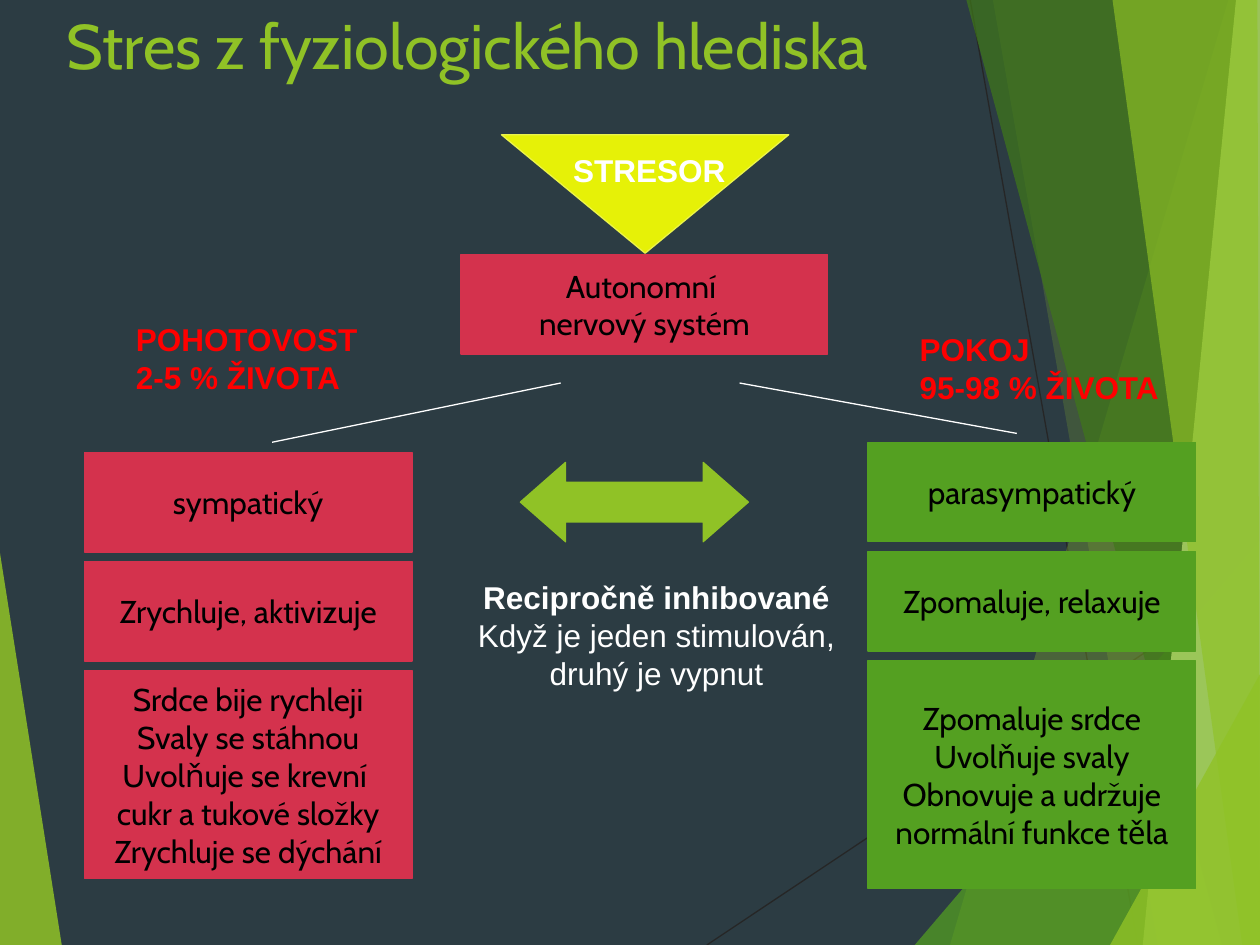
from lxml import etree
from pptx import Presentation
from pptx import util as u
from pptx.dml.color import RGBColor
from pptx.enum import shapes, text
from pptx.oxml.ns import qn

SLATE = RGBColor(0x2C, 0x3C, 0x43)
CHARCOAL = RGBColor(0x26, 0x26, 0x26)
LIME = RGBColor(0x90, 0xC2, 0x26)
PALE_LIME = RGBColor(0xC0, 0xE4, 0x74)
GREEN = RGBColor(0x54, 0xA0, 0x21)
FOREST = RGBColor(0x3F, 0x78, 0x19)
CRIMSON = RGBColor(0xD4, 0x32, 0x4D)
YELLOW = RGBColor(0xE6, 0xF1, 0x07)
PALE_YELLOW = RGBColor(0xEB, 0xF3, 0x4B)
RED = RGBColor(0xFF, 0x00, 0x00)
WHITE = RGBColor(0xFF, 0xFF, 0xFF)
BLACK = RGBColor(0x00, 0x00, 0x00)

LEFT, CENTER = text.PP_ALIGN.LEFT, text.PP_ALIGN.CENTER
TOP, MIDDLE = text.MSO_ANCHOR.TOP, text.MSO_ANCHOR.MIDDLE


def write(box, lines, color=WHITE, font="Arial", size=18, bold_lines=0,
          align=LEFT, anchor=TOP, wrap=False):
    """Fill a box with one paragraph per line, the first bold_lines in bold."""
    frame = box.text_frame
    frame.word_wrap, frame.vertical_anchor = wrap, anchor
    for index, line in enumerate(lines.split("\n")):
        para = frame.paragraphs[0] if index == 0 else frame.add_paragraph()
        para.alignment = align
        span = para.add_run()
        span.text = line
        span.font.name, span.font.size = font, u.Pt(size)
        span.font.bold = index < bold_lines
        span.font.color.rgb = color


class Board:
    """Draws on one page with a grid of 100 columns by 75 rows."""

    columns, rows = 100, 75
    line_width = u.Pt(0.75)

    def __init__(self, deck, background):
        self.cell_width = deck.slide_width / self.columns
        self.cell_height = deck.slide_height / self.rows
        self.page = deck.slides.add_slide(deck.slide_layouts[6])
        self.page.background.fill.solid()
        self.page.background.fill.fore_color.rgb = background

    def point(self, column, row):
        return round(column * self.cell_width), round(row * self.cell_height)

    def area(self, column, row, width, height):
        return *self.point(column, row), *self.point(width, height)

    def paint(self, shape, fill, outline=None):
        shape.shadow.inherit = False
        shape.fill.solid()
        shape.fill.fore_color.rgb = fill
        if outline is None:
            shape.line.fill.background()
        else:
            shape.line.color.rgb, shape.line.width = outline, self.line_width

    def facet(self, points, color, opacity):
        start, *others = [self.point(*corner) for corner in points]
        builder = self.page.shapes.build_freeform(*start)
        builder.add_line_segments(others)
        shape = builder.convert_to_shape()
        self.paint(shape, color)
        tint = shape.fill._xPr.find(f"{qn('a:solidFill')}/{qn('a:srgbClr')}")
        etree.SubElement(tint, qn("a:alpha"), val=str(opacity * 1000))

    def line(self, start, end, color):
        connector = self.page.shapes.add_connector(
            shapes.MSO_CONNECTOR.STRAIGHT, *self.point(*start), *self.point(*end))
        connector.line.color.rgb, connector.line.width = color, self.line_width
        etree.SubElement(connector._element.spPr, qn("a:effectLst"))

    def shape(self, kind, area, fill, outline=None):
        shape = self.page.shapes.add_shape(kind, *self.area(*area))
        self.paint(shape, fill, outline or fill)
        return shape

    def block(self, area, fill, lines):
        box = self.shape(shapes.MSO_SHAPE.RECTANGLE, area, fill)
        write(box, lines, BLACK, "Cabin", align=CENTER, anchor=MIDDLE)

    def stack(self, column, row, fill, blocks):
        for index, (height, lines) in enumerate(blocks):
            self.block((column, row + index * 8.67, 26, height), fill, lines)

    def label(self, area, lines, **style):
        write(self.page.shapes.add_textbox(*self.area(*area)), lines, **style)


def draw_backdrop(board):
    """Draw the two thin lines and the translucent green facets."""
    board.line((56.1, 75), (100, 45.7), CHARCOAL)
    board.line((77, 0), (90.3, 75), CHARCOAL)
    facets = [
        ([(0, 43.9), (4.9, 75), (0, 75)], LIME, 85),
        ([(97.5, 0), (75.4, 75), (100, 75), (100, 0)], LIME, 30),
        ([(78.8, 0), (91.9, 75), (100, 75), (100, 0)], LIME, 20),
        ([(72.6, 75), (100, 42.9), (100, 75)], GREEN, 72),
        ([(76.7, 0), (97, 75), (100, 75), (100, 0)], FOREST, 70),
        ([(98.1, 0), (90.7, 75), (100, 75), (100, 0)], PALE_LIME, 70),
        ([(88.3, 0), (98.6, 75), (100, 75), (99.8, 0)], LIME, 65),
        ([(88.1, 75), (100, 53.5), (100, 75)], LIME, 80),
    ]
    for points, color, opacity in facets:
        board.facet(points, color, opacity)


def draw_diagram(board):
    """Draw the stressor, the nervous system and its two opposite branches."""
    board.label((4.3, 0, 90, 12.5), "Stres z fyziologického hlediska",
                color=LIME, font="Cabin", size=36, wrap=True)
    board.block((36.6, 20.2, 29.1, 7.9), CRIMSON, "Autonomní \nnervový systém")
    board.line((44.5, 30.4), (21.6, 35.1), WHITE)
    board.line((58.7, 30.4), (80.7, 34.4), WHITE)
    board.stack(6.7, 35.9, CRIMSON, [
        (7.9, "sympatický"),
        (7.9, "Zrychluje, aktivizuje"),
        (16.5, "Srdce bije rychleji\nSvaly se stáhnou\nUvolňuje se krevní \n"
               "cukr a tukové složky\nZrychluje se dýchání"),
    ])
    board.stack(68.9, 35.1, GREEN, [
        (7.9, "parasympatický"),
        (7.9, "Zpomaluje, relaxuje"),
        (18.1, "Zpomaluje srdce\nUvolňuje svaly\nObnovuje a udržuje\n"
               "normální funkce těla"),
    ])
    board.label((36.6, 45.4, 31, 10),
                "Recipročně inhibované\nKdyž je jeden stimulován, \ndruhý je vypnut",
                bold_lines=1, align=CENTER)
    arrow = board.shape(shapes.MSO_SHAPE.LEFT_RIGHT_ARROW,
                        (41.3, 36.7, 18.1, 6.3), LIME)
    arrow.adjustments[1] = 0.57
    stressor = board.shape(shapes.MSO_SHAPE.ISOSCELES_TRIANGLE,
                           (39.8, 10.7, 22.8, 9.4), YELLOW, PALE_YELLOW)
    stressor.rotation = 180
    board.label((44.5, 11.5, 14.1, 4), "STRESOR", bold_lines=1)
    board.label((9.8, 24.9, 19.7, 7), "POHOTOVOST\n2-5 % ŽIVOTA",
                color=RED, bold_lines=2)
    board.label((72, 25.7, 21.2, 7), "POKOJ\n95-98 % ŽIVOTA",
                color=RED, bold_lines=2)


def main():
    """Build and save the deck."""
    deck = Presentation()
    deck.slide_width, deck.slide_height = u.Inches(10), u.Inches(7.5)
    board = Board(deck, SLATE)
    draw_backdrop(board)
    draw_diagram(board)
    deck.save("out.pptx")


if __name__ == "__main__":
    main()
